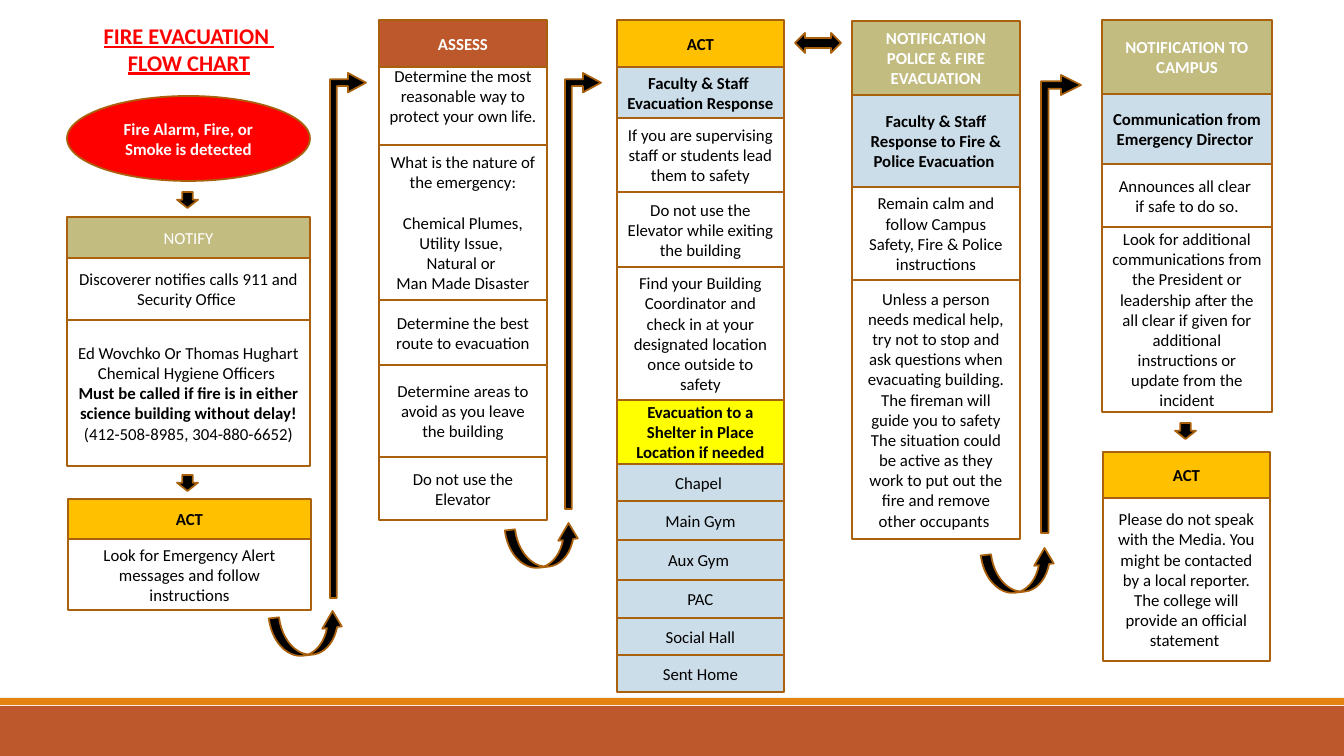
from pptx import Presentation
from pptx.dml.color import RGBColor as RGB
from pptx.enum.shapes import MSO_SHAPE as Geo
from pptx.enum.text import MSO_ANCHOR as Anchor, PP_ALIGN as Align
from pptx.util import Emu, Pt

PX = 914400 / 100.8

WHITE = RGB(0xFF, 0xFF, 0xFF)
BLACK = RGB(0, 0, 0)
RED = RGB(0xFF, 0, 0)
GOLD = RGB(0xFF, 0xC0, 0)
YELLOW = RGB(0xFF, 0xFF, 0)
BLUE = RGB(0xCC, 0xDD, 0xEA)
KHAKI = RGB(0xC2, 0xBC, 0x80)
RUST = RGB(0xBD, 0x58, 0x2C)
ORANGE = RGB(0xE4, 0x83, 0x12)
BROWN = RGB(0xA9, 0x61, 0x0D)

# Looks of a box: fill, ink, bold
STEP = (WHITE, BLACK, False)
PLACE = (BLUE, BLACK, False)
TEAM = (BLUE, BLACK, True)
ACT = (GOLD, BLACK, True)
SAFE = (YELLOW, BLACK, True)
NOTE = (KHAKI, WHITE, True)
CALL = (KHAKI, WHITE, False)
RATE = (RUST, WHITE, True)
ALARM = (RED, WHITE, True)
TITLE = (WHITE, RED, True)


def px(n):
    return Emu(round(n * PX))


class Chart:
    font = "Calibri"
    edge = Pt(1.25)
    row = Pt(14.6)

    def __init__(self, deck):
        self.slide = deck.slides.add_slide(deck.slide_layouts[6])

    def shape(self, geo, x, y, w, h, fill, line=BROWN, adj=()):
        item = self.slide.shapes.add_shape(geo, px(x), px(y), px(w), px(h))
        item.shadow.inherit = False
        item.fill.solid()
        item.fill.fore_color.rgb = fill
        if line is None:
            item.line.fill.background()
        else:
            item.line.color.rgb = line
            item.line.width = self.edge
        for i, part in enumerate(adj):
            item.adjustments[i] = part
        return item

    def label(self, item, text, ink, bold, size=12, under=False):
        """Asterisks toggle bold; an empty line becomes space before."""
        frame = item.text_frame
        frame.word_wrap = True
        frame.vertical_anchor = Anchor.MIDDLE
        para, gap = None, False
        for line in text.split("\n"):
            if not line:
                gap = True
                continue
            para = frame.add_paragraph() if para else frame.paragraphs[0]
            para.alignment = Align.CENTER
            if gap:
                para.space_before = self.row
                gap = False
            for i, part in enumerate(line.split("*")):
                if part:
                    run = para.add_run()
                    run.text = part
                    run.font.name = self.font
                    run.font.size = Pt(size)
                    run.font.bold = bold or i % 2 == 1
                    run.font.underline = under
                    run.font.color.rgb = ink

    def box(self, x, y, w, h, look, text, geo=Geo.RECTANGLE):
        fill, ink, bold = look
        item = self.shape(geo, x, y, w, h, fill)
        self.label(item, text, ink, bold)
        return item

    def stack(self, x, y, w, rows):
        items = []
        for h, look, text in rows:
            items.append(self.box(x, y, w, h, look, text))
            y += h
        return items

    def title(self, x, y, w, h, text):
        fill, ink, bold = TITLE
        item = self.shape(Geo.RECTANGLE, x, y, w, h, fill, None)
        self.label(item, text, ink, bold, 16, True)
        item.text_frame.vertical_anchor = Anchor.TOP

    def down(self, x, y):
        self.shape(Geo.DOWN_ARROW, x, y, 21, 16, BLACK, adj=(0.5, 0.52))

    def bent(self, x, y, w, h, head):
        self.shape(Geo.BENT_ARROW, x, y, w, h, BLACK, adj=(0.19, head, 0.5, 0))

    def curve(self, x, y):
        item = self.shape(Geo.CURVED_DOWN_ARROW, x, y, 74, 41, BLACK,
                          adj=(0.25, 0.48, 0.4))
        item.rotation = 173.3
        item.element.spPr.xfrm.set("flipH", "1")


def main():
    deck = Presentation()
    deck.slide_width, deck.slide_height = px(1344), px(756)
    chart = Chart(deck)

    # Footer bars
    chart.shape(Geo.RECTANGLE, 0, 706, 1344, 50, RUST, None)
    chart.shape(Geo.RECTANGLE, 0, 698, 1344, 7, ORANGE, None)

    # Title and alarm
    chart.title(42, 17, 294, 64, "FIRE EVACUATION \nFLOW CHART")
    chart.box(67, 96, 243, 85, ALARM, "Fire Alarm, Fire, or Smoke is detected",
              Geo.FLOWCHART_CONNECTOR)

    # Notify
    chart.stack(67, 217, 243, [
        (41, CALL, "NOTIFY"),
        (62, STEP, "Discoverer notifies calls 911 and Security Office "),
        (146, STEP, "Ed Wovchko Or Thomas Hughart\nChemical Hygiene Officers \n"
         "*Must be called if fire is in either science building without delay! *"
         "(412-508-8985, 304-880-6652)"),
    ])
    chart.stack(68, 499, 243, [
        (40, ACT, "ACT"),
        (71, STEP, "Look for Emergency Alert messages and follow instructions"),
    ])

    # Assess
    rate = chart.stack(379, 20, 168, [
        (47, RATE, "ASSESS"),
        (78, STEP, "Determine the most reasonable way to protect your own life."),
        (155, STEP, "What is the nature of the emergency:\n\n"
         "Chemical Plumes, Utility Issue, \nNatural or \nMan Made Disaster"),
        (65, STEP, "Determine the best route to evacuation"),
        (92, STEP, "Determine areas to avoid as you leave the building"),
        (63, STEP, "Do not use the Elevator"),
    ])
    rate[1].text_frame.margin_bottom = px(25)

    # Act
    chart.stack(617, 20, 167, [
        (47, ACT, "ACT"),
        (51, TEAM, "Faculty & Staff \nEvacuation Response"),
        (74, STEP, "If you are supervising staff or students lead them to safety"),
        (75, STEP, "Do not use the Elevator while exiting the building"),
        (133, STEP, "Find your Building Coordinator and check in at your "
         "designated location once outside to safety"),
        (64, SAFE, "Evacuation to a Shelter in Place Location if needed"),
        (37, PLACE, "Chapel "),
        (39, PLACE, "Main Gym"),
        (40, PLACE, "Aux Gym "),
        (38, PLACE, "PAC"),
        (37, PLACE, "Social Hall"),
        (37, PLACE, "Sent Home"),
    ])

    # Police and fire
    chart.stack(852, 21, 168, [
        (74, NOTE, "NOTIFICATION POLICE & FIRE EVACUATION"),
        (92, TEAM, "Faculty & Staff Response to Fire &\nPolice Evacuation "),
        (93, STEP, "Remain calm and follow Campus Safety, Fire & Police "
         "instructions"),
        (259, STEP, "Unless a person needs medical help, try not to stop and ask "
         "questions when evacuating building. The fireman will guide you to "
         "safety The situation could be active as they work to put out the "
         "fire and remove other occupants "),
    ])

    # Campus
    chart.stack(1102, 20, 170, [
        (74, NOTE, "NOTIFICATION TO CAMPUS"),
        (70, TEAM, "Communication from Emergency Director "),
        (63, STEP, "Announces all clear \nif safe to do so."),
        (185, STEP, "Look for additional communications from the President or "
         "leadership after the all clear if given for additional "
         "instructions or update from the incident"),
    ])
    chart.stack(1103, 452, 167, [
        (46, ACT, "ACT"),
        (163, STEP, "Please do not speak with the Media. You might be contacted "
         "by a local reporter. The college will provide an official statement "),
    ])

    # Arrows
    for x, y in [(177, 192), (177, 475), (1175, 423)]:
        chart.down(x, y)
    for x, y, w, h, head in [(330, 73, 36, 525, 0.27), (565, 73, 36, 436, 0.27),
                             (1041, 75, 40, 458, 0.25)]:
        chart.bent(x, y, w, h, head)
    for x, y in [(271, 614), (507, 526), (983, 551)]:
        chart.curve(x, y)
    chart.shape(Geo.LEFT_RIGHT_ARROW, 795, 33, 46, 20, BLACK)

    deck.save("out.pptx")


if __name__ == "__main__":
    main()
